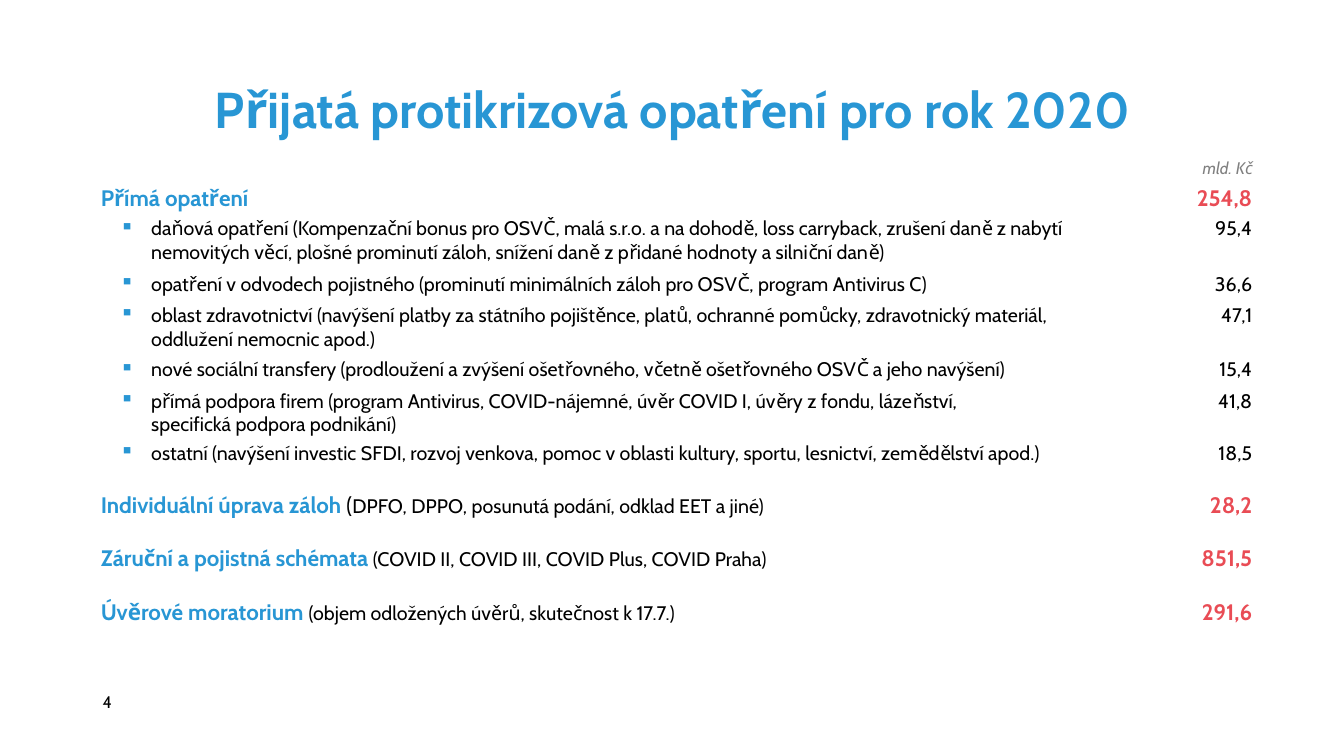
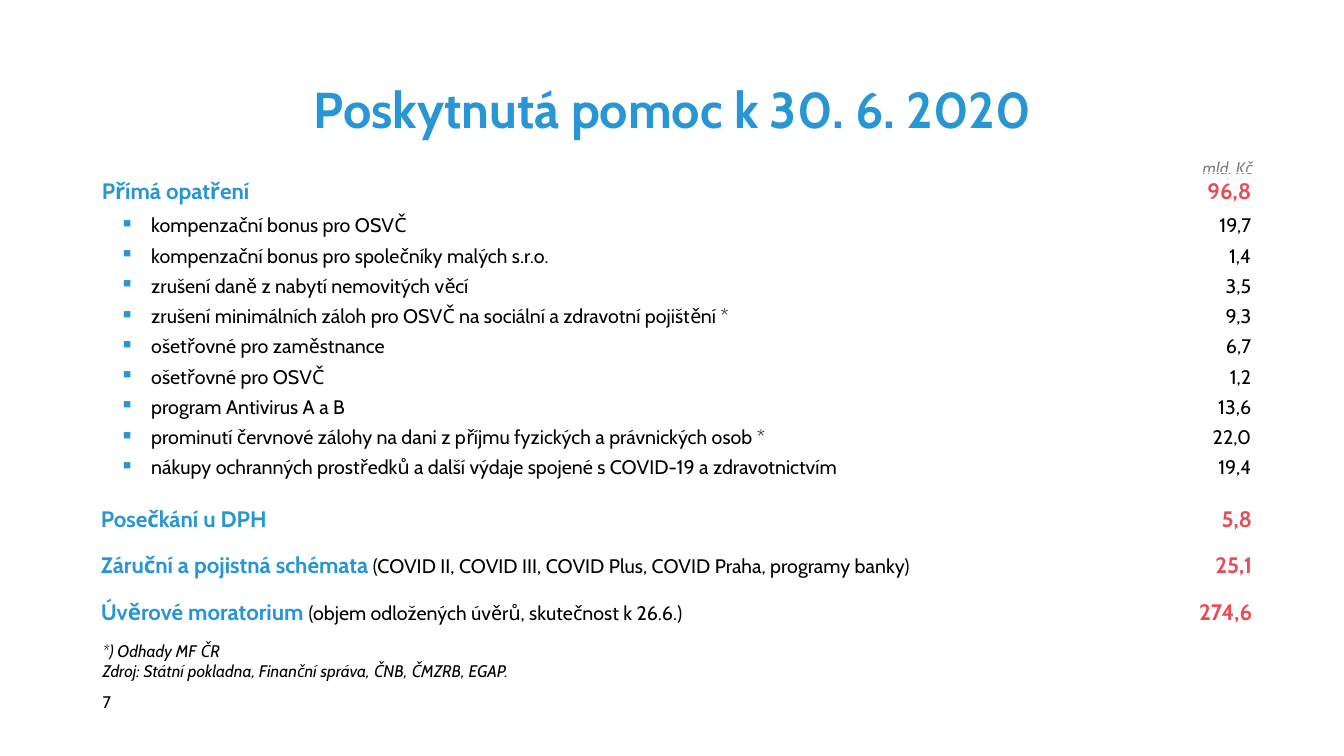
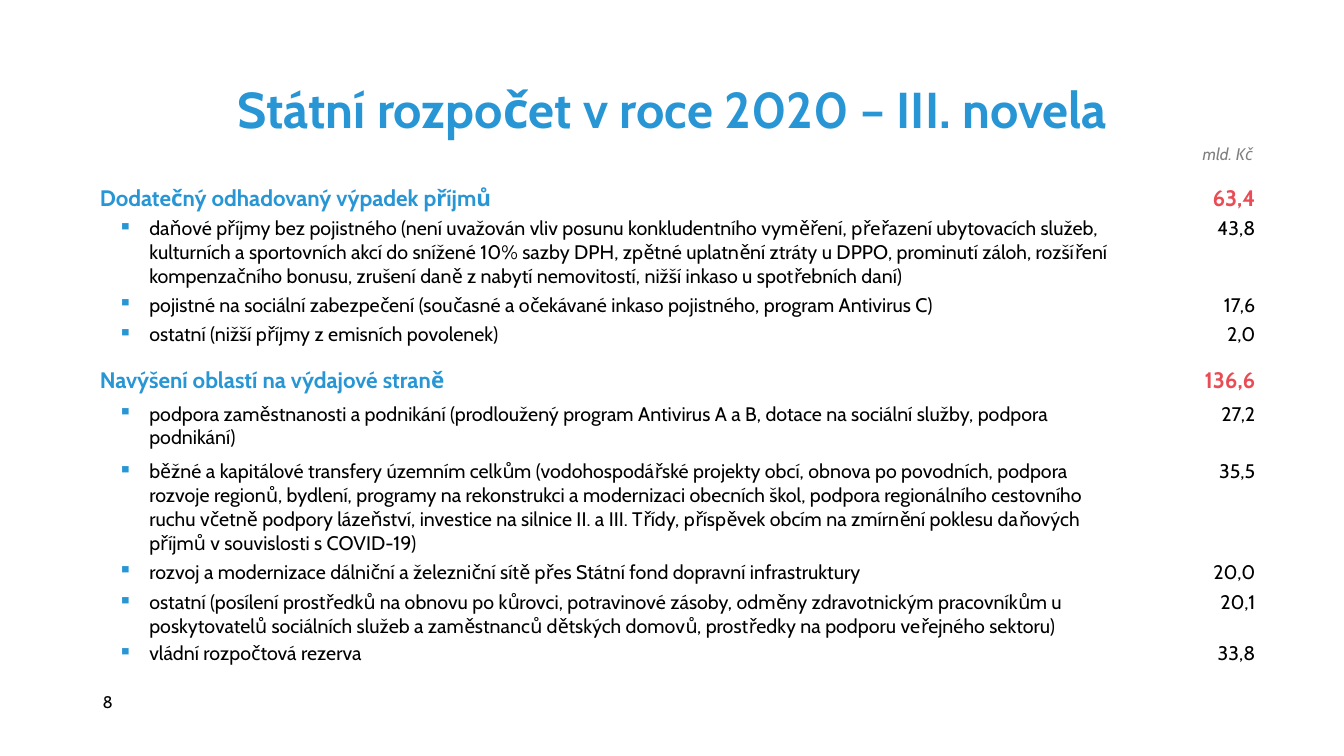
from lxml.etree import SubElement
from pptx import Presentation
from pptx.dml.color import RGBColor
from pptx.enum.text import MSO_ANCHOR, PP_ALIGN
from pptx.oxml.ns import qn
from pptx.util import Inches, Pt

FONT = "Cabin"
COLORS = {"blue": "2896D4", "red": "E94C55", "black": "000000", "gray": "808080"}
STYLES = {
    "title": {"size": 36, "color": "blue", "bold": True},
    "heading": {"size": 16, "color": "blue", "bold": True},
    "total": {"size": 16, "color": "red", "bold": True},
    "bracket": {"size": 16, "color": "black"},
    "detail": {"size": 14, "color": "black"},
    "number": {"size": 12, "color": "black"},
    "unit": {"size": 12, "color": "gray", "italic": True},
    "footnote": {"size": 12, "color": "black", "italic": True},
}
BULLET_HANG = 0.31
SUMMARY_COLUMNS = (10.65, 0.77)
SUMMARY_HEIGHT = 0.27
LAST_SUMMARY_TOP = 5.94

MEASURES = [
    (0.36, "heading", "Přímá opatření", "254,8"),
    (0.55, "detail", "daňová opatření (Kompenzační bonus pro OSVČ, malá s.r.o. a na dohodě, loss carryback, "
     "zrušení daně z nabytí nemovitých věcí, plošné prominutí záloh, snížení daně z přidané hodnoty "
     "a silniční daně)", "95,4"),
    (0.31, "detail", "opatření v odvodech pojistného (prominutí minimálních záloh pro OSVČ, "
     "program Antivirus C)", "36,6"),
    (0.54, "detail", "oblast zdravotnictví (navýšení platby za státního pojištěnce, platů, ochranné pomůcky, "
     "zdravotnický materiál, oddlužení nemocnic apod.)", "47,1"),
    (0.31, "detail", "nové sociální transfery (prodloužení a zvýšení ošetřovného, včetně ošetřovného OSVČ "
     "a jeho navýšení)", "15,4"),
    (0.52, "detail", "přímá podpora firem (program Antivirus, COVID-nájemné, úvěr COVID I, úvěry z fondu, "
     "lázeňství,\nspecifická podpora podnikání)", "41,8"),
    (0.29, "detail", "ostatní (navýšení investic SFDI, rozvoj venkova, pomoc v oblasti kultury, sportu, "
     "lesnictví, zemědělství apod.)", "18,5"),
]
MEASURE_SUMMARIES = [
    ([("Individuální úprava záloh ", "heading"), ("(", "bracket"),
      ("DPFO, DPPO, posunutá podání, odklad EET a jiné)", "detail")], "28,2"),
    ([("Záruční a pojistná schémata", "heading"),
      (" (COVID II, COVID III, COVID Plus, COVID Praha)", "detail")], "851,5"),
    ([("Úvěrové moratorium ", "heading"),
      ("(objem odložených úvěrů, skutečnost k 17.7.)", "detail")], "291,6"),
]

AID = [(0.38, "heading", "Přímá opatření", "96,8")] + [
    (0.3, "detail", text, value) for text, value in (
        ("kompenzační bonus pro OSVČ", "19,7"),
        ("kompenzační bonus pro společníky malých s.r.o.", "1,4"),
        ("zrušení daně z nabytí nemovitých věcí", "3,5"),
        ("zrušení minimálních záloh pro OSVČ na sociální a zdravotní pojištění *", "9,3"),
        ("ošetřovné pro zaměstnance", "6,7"),
        ("ošetřovné pro OSVČ", "1,2"),
        ("program Antivirus A a B", "13,6"),
        ("prominutí červnové zálohy na dani z příjmu fyzických a právnických osob *", "22,0"),
        ("nákupy ochranných prostředků a další výdaje spojené s COVID-19 a zdravotnictvím", "19,4"),
    )
]
AID_SUMMARIES = [
    ([("Posečkání u DPH", "heading")], "5,8"),
    ([("Záruční a pojistná schémata", "heading"),
      (" (COVID II, COVID III, COVID Plus, COVID Praha, programy banky)", "detail")], "25,1"),
    ([("Úvěrové moratorium ", "heading"),
      ("(objem odložených úvěrů, skutečnost k 26.6.)", "detail")], "274,6"),
]

BUDGET = [
    (0.36, "heading", "Dodatečný odhadovaný výpadek příjmů", "63,4"),
    (0.76, "detail", "daňové příjmy bez pojistného (není uvažován vliv posunu konkludentního vyměření, "
     "přeřazení ubytovacích služeb, kulturních a sportovních akcí do snížené 10% sazby DPH, zpětné "
     "uplatnění ztráty u DPPO, prominutí záloh, rozšíření kompenzačního bonusu, zrušení daně z nabytí "
     "nemovitostí, nižší inkaso u spotřebních daní)", "43,8"),
    (0.29, "detail", "pojistné na sociální zabezpečení (současné a očekávané inkaso pojistného, "
     "program Antivirus C)", "17,6"),
    (0.36, "detail", "ostatní (nižší příjmy z emisních povolenek)", "2,0"),
    (0.43, "heading", "Navýšení oblastí na výdajové straně", "136,6"),
    (0.57, "detail", "podpora zaměstnanosti a podnikání (prodloužený program Antivirus A a B, dotace "
     "na sociální služby, podpora podnikání)", "27,2"),
    (1, "detail", "běžné a kapitálové transfery územním celkům (vodohospodářské projekty obcí, obnova "
     "po povodních, podpora rozvoje regionů, bydlení, programy na rekonstrukci a modernizaci obecních "
     "škol, podpora regionálního cestovního ruchu včetně podpory lázeňství, investice na silnice II. "
     "a III. Třídy, příspěvek obcím na zmírnění poklesu daňových příjmů v souvislosti s COVID-19)", "35,5"),
    (0.3, "detail", "rozvoj a modernizace dálniční a železniční sítě přes Státní fond dopravní "
     "infrastruktury", "20,0"),
    (0.51, "detail", "ostatní (posílení prostředků na obnovu po kůrovci, potravinové zásoby, odměny "
     "zdravotnickým pracovníkům u poskytovatelů sociálních služeb a zaměstnanců dětských domovů, "
     "prostředky na podporu veřejného sektoru)", "20,1"),
    (0.36, "detail", "vládní rozpočtová rezerva", "33,8"),
]


def set_font(font, style_name):
    """Apply a named text style to a font."""
    style = STYLES[style_name]
    font.name = FONT
    font.size = Pt(style["size"])
    font.bold = style.get("bold", False)
    font.italic = style.get("italic", False)
    font.color.rgb = RGBColor.from_string(COLORS[style["color"]])


def add_bullet(paragraph, indent):
    """Give a paragraph a blue square bullet with a hanging indent."""
    properties = paragraph._p.get_or_add_pPr()
    properties.set("marL", str(Inches(indent)))
    properties.set("indent", str(Inches(-BULLET_HANG)))
    color = SubElement(properties, qn("a:buClr"))
    SubElement(color, qn("a:srgbClr")).set("val", COLORS["blue"])
    SubElement(properties, qn("a:buChar")).set("char", "▪")


def add_text(slide, box, lines, style_name, anchor=MSO_ANCHOR.TOP, wrap=True):
    """Add a text box with one paragraph per line and return its paragraphs."""
    frame = slide.shapes.add_textbox(*map(Inches, box)).text_frame
    frame.word_wrap = wrap
    frame.vertical_anchor = anchor
    for index, line in enumerate(lines):
        paragraph = frame.add_paragraph() if index else frame.paragraphs[0]
        paragraph.text = line
        set_font(paragraph.font, style_name)
    return frame.paragraphs


def add_table(slide, left, top, columns, heights, margin=0):
    """Add a plain table without style bands or fills."""
    box = (left, top, sum(columns), sum(heights))
    table = slide.shapes.add_table(len(heights), len(columns), *map(Inches, box)).table
    table.first_row = table.horz_banding = False
    for column, width in zip(table.columns, columns):
        column.width = Inches(width)
    for row, height in zip(table.rows, heights):
        row.height = Inches(height)
    for cell in table.iter_cells():
        cell.fill.background()
        cell.margin_left = cell.margin_right = Inches(margin)
        cell.margin_top = cell.margin_bottom = Inches(margin)
        cell.vertical_anchor = MSO_ANCHOR.MIDDLE
    return table


def fill_value(cell, value, style_name):
    """Write a right-aligned amount."""
    paragraph = cell.text_frame.paragraphs[0]
    paragraph.text = value
    paragraph.alignment = PP_ALIGN.RIGHT
    set_font(paragraph.font, style_name)


def add_item_table(slide, left, top, columns, items, indent=0.49, margin=0, anchor=MSO_ANCHOR.TOP):
    """Add a table of headings and bulleted items with their amounts."""
    table = add_table(slide, left, top, columns, [item[0] for item in items], margin)
    for row, (_, style_name, text, value) in zip(table.rows, items):
        label_cell, value_cell = row.cells
        paragraph = label_cell.text_frame.paragraphs[0]
        paragraph.text = text
        if style_name == "detail":
            label_cell.vertical_anchor = value_cell.vertical_anchor = anchor
            add_bullet(paragraph, indent)
        set_font(paragraph.font, style_name)
        fill_value(value_cell, value, "total" if style_name == "heading" else "detail")


def add_summaries(slide, left, last_top, pitch, summaries):
    """Add evenly spaced one-row tables that end at the last top."""
    first_top = last_top - pitch * (len(summaries) - 1)
    for index, (parts, value) in enumerate(summaries):
        table = add_table(slide, left, first_top + index * pitch, SUMMARY_COLUMNS, [SUMMARY_HEIGHT])
        paragraph = table.cell(0, 0).text_frame.paragraphs[0]
        for text, style_name in parts:
            run = paragraph.add_run()
            run.text = text
            set_font(run.font, style_name)
        fill_value(table.cell(0, 1), value, "total")


def add_base_slide(presentation, title, number, unit_top=1.52):
    """Add a slide with its title, page number and unit label."""
    slide = presentation.slides.add_slide(presentation.slide_layouts[6])
    heading = add_text(slide, (0.92, 0.4, 11.5, 1.27), [title], "title", MSO_ANCHOR.MIDDLE)[0]
    heading.alignment = PP_ALIGN.CENTER
    heading.line_spacing = 1.13
    add_text(slide, (0.92, 6.75, 0.48, 0.43), [number], "number", MSO_ANCHOR.MIDDLE)
    add_text(slide, (11.83, unit_top, 0.7, 0.3), ["mld. Kč"], "unit", wrap=False)
    return slide


def build_measures(presentation):
    """Build the slide of adopted measures."""
    slide = add_base_slide(presentation, "Přijatá protikrizová opatření pro rok 2020", "4")
    add_item_table(slide, 1, 1.79, (10.1, 1.32), MEASURES, indent=0.5)
    add_summaries(slide, 1, LAST_SUMMARY_TOP, 0.53, MEASURE_SUMMARIES)


def build_aid(presentation):
    """Build the slide of provided aid."""
    slide = add_base_slide(presentation, "Poskytnutá pomoc k 30. 6. 2020", "7")
    add_item_table(slide, 1, 1.71, (10.27, 1.15), AID, margin=0.01, anchor=MSO_ANCHOR.MIDDLE)
    add_summaries(slide, 1, LAST_SUMMARY_TOP, 0.46, AID_SUMMARIES)
    notes = ["*) Odhady MF ČR", "Zdroj: Státní pokladna, Finanční správa, ČNB, ČMZRB, EGAP."]
    add_text(slide, (0.92, 6.31, 4.4, 0.5), notes, "footnote", wrap=False)


def build_budget(presentation):
    """Build the slide of the state budget amendment."""
    slide = add_base_slide(presentation, "Státní rozpočet v roce 2020 – III. novela", "8", unit_top=1.38)
    add_item_table(slide, 0.99, 1.79, (10.13, 1.33), BUDGET)


def main():
    """Build and save the presentation."""
    presentation = Presentation()
    presentation.slide_width = Inches(13.33)
    presentation.slide_height = Inches(7.5)
    build_measures(presentation)
    build_aid(presentation)
    build_budget(presentation)
    presentation.save("out.pptx")


if __name__ == "__main__":
    main()
